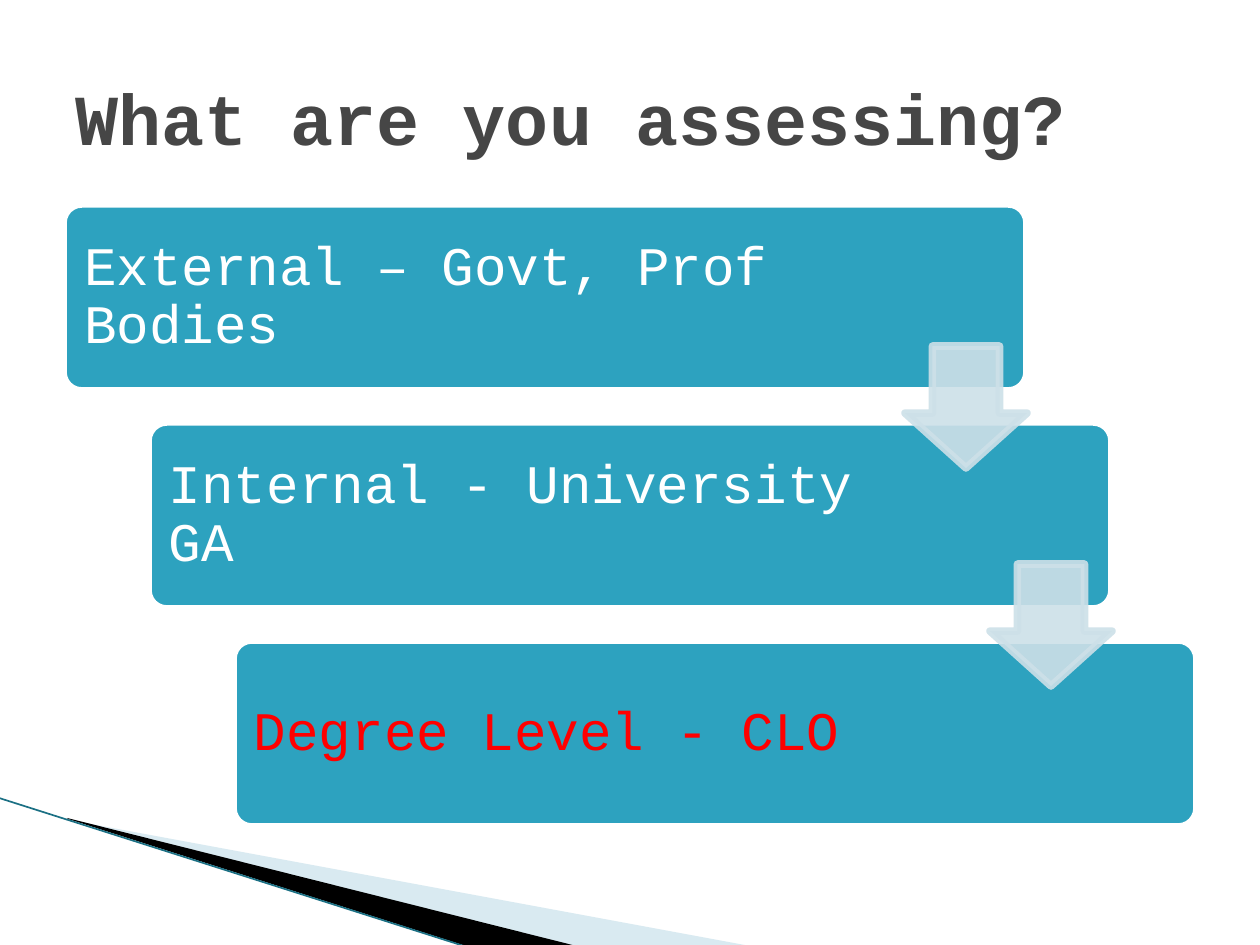
from lxml.etree import SubElement
from pptx import Presentation
from pptx.dml.color import RGBColor
from pptx.enum.shapes import MSO_CONNECTOR, MSO_SHAPE
from pptx.enum.text import MSO_ANCHOR, MSO_AUTO_SIZE, PP_ALIGN
from pptx.oxml.ns import qn
from pptx.util import Emu, Pt

EMU_PER_PX = 914400 / 126
FONT = "Courier New"
WHITE = RGBColor(0xFF, 0xFF, 0xFF)
BLACK = RGBColor(0x00, 0x00, 0x00)
RED = RGBColor(0xFF, 0x00, 0x00)
GREY = RGBColor(0x46, 0x46, 0x46)
TEAL = RGBColor(0x2D, 0xA2, 0xBF)
DARK_TEAL = RGBColor(0x1B, 0x70, 0x84)
PALE_BLUE = RGBColor(0xA0, 0xCB, 0xDC)
ARROW_BLUE = RGBColor(0xCD, 0xE0, 0xE8)

LEVELS = [
    ("External – Govt, Prof Bodies", 762, WHITE),
    ("Internal - University GA", 746, WHITE),
    ("Degree Level - CLO", 746, RED),
]
STEP_X, STEP_Y = 85, 218


def px(length):
    return Emu(round(length * EMU_PER_PX))


def box(*lengths):
    return [px(length) for length in lengths]


def set_alpha(fill_owner, percent):
    for color in fill_owner.findall(qn("a:solidFill") + "/" + qn("a:srgbClr")):
        SubElement(color, qn("a:alpha")).set("val", str(percent * 1000))


def style_text(frame, text, size, color, bold=False):
    frame.text = text
    frame.word_wrap = True
    frame.auto_size = MSO_AUTO_SIZE.NONE
    frame.vertical_anchor = MSO_ANCHOR.MIDDLE
    line = frame.paragraphs[0]
    line.alignment = PP_ALIGN.LEFT
    font = line.runs[0].font
    font.name, font.size, font.bold = FONT, Pt(size), bold
    font.color.rgb = color
    return line


def add_wedge(slide, points, color, opacity=100):
    start, *rest = [tuple(box(*point)) for point in points]
    builder = slide.shapes.build_freeform(*start, scale=1.0)
    builder.add_line_segments(rest, close=True)
    wedge = builder.convert_to_shape()
    wedge.shadow.inherit = False
    wedge.fill.solid()
    wedge.fill.fore_color.rgb = color
    wedge.line.fill.background()
    if opacity < 100:
        set_alpha(wedge.element.spPr, opacity)


def add_edge(slide, start, end):
    edge = slide.shapes.add_connector(MSO_CONNECTOR.STRAIGHT, *box(*start, *end))
    edge.line.color.rgb = DARK_TEAL
    edge.line.width = Pt(0.95)
    SubElement(edge.element.spPr, qn("a:effectLst"))


def add_solid(slide, kind, place, fill, outline, adjustments):
    solid = slide.shapes.add_shape(kind, *box(*place))
    solid.shadow.inherit = False
    solid.fill.solid()
    solid.fill.fore_color.rgb = fill
    solid.line.color.rgb = outline
    solid.line.width = Pt(4.33)
    for index, value in enumerate(adjustments):
        solid.adjustments[index] = value
    return solid


def add_level(slide, index, text, text_width, color):
    left, top = 63 + index * STEP_X, 204 + index * STEP_Y
    add_solid(slide, MSO_SHAPE.ROUNDED_RECTANGLE, (left, top, 964, 187),
              TEAL, WHITE, [0.1])
    label = slide.shapes.add_textbox(*box(left + 5, top + 5, text_width, 176))
    frame = label.text_frame
    frame.margin_left = frame.margin_right = px(16)
    frame.margin_top = frame.margin_bottom = px(16)
    style_text(frame, text, 31, color).line_spacing = 0.9


def add_step_arrow(slide, index):
    place = (905 + index * STEP_X, 346 + index * STEP_Y, 122, 122)
    arrow = add_solid(slide, MSO_SHAPE.DOWN_ARROW, place,
                      ARROW_BLUE, ARROW_BLUE, [0.45, 0.55])
    arrow.adjustments[0], arrow.adjustments[1] = 0.55, 0.45
    properties = arrow.element.spPr
    set_alpha(properties, 90)
    set_alpha(properties.find(qn("a:ln")), 90)


def add_title(slide, text):
    title = slide.shapes.title
    title.left, title.top, title.width, title.height = box(63, 38, 1134, 158)
    style_text(title.text_frame, text, 41, GREY, bold=True)


def main():
    deck = Presentation()
    deck.slide_width, deck.slide_height = box(1260, 945)
    slide = deck.slides.add_slide(deck.slide_layouts[5])
    add_wedge(slide, [(69, 820), (750, 946), (575, 946), (69, 819)], PALE_BLUE, 40)
    add_wedge(slide, [(67, 818), (576, 946), (469, 947), (68, 819)], BLACK)
    add_edge(slide, (-1, 798), (467, 947))
    for index, level in enumerate(LEVELS):
        add_level(slide, index, *level)
    for index in range(len(LEVELS) - 1):
        add_step_arrow(slide, index)
    add_title(slide, "What are you assessing?")
    deck.save("out.pptx")


if __name__ == "__main__":
    main()
